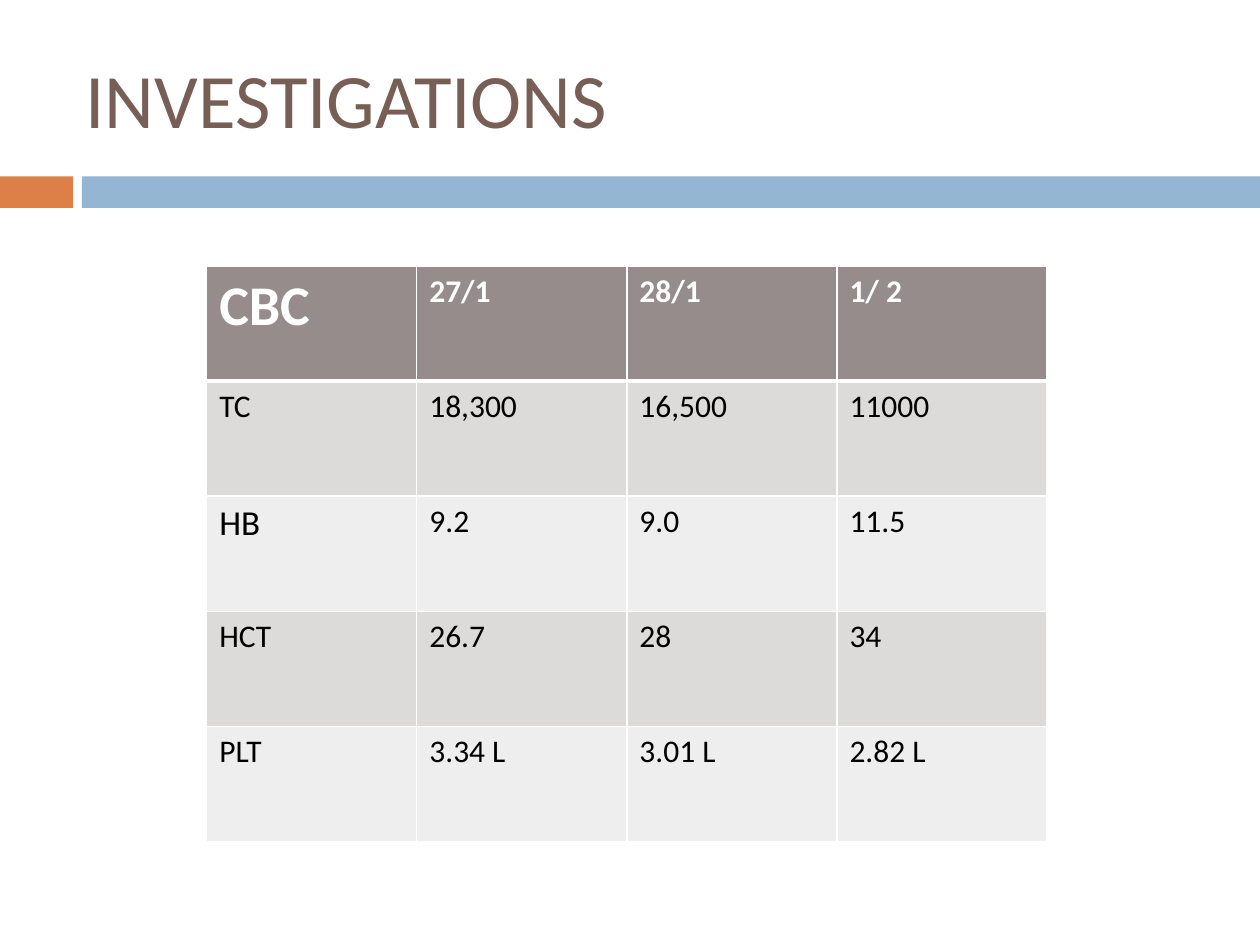
from dataclasses import dataclass

from lxml import etree
from pptx import Presentation
from pptx.dml.color import RGBColor
from pptx.enum.shapes import MSO_SHAPE
from pptx.enum.text import MSO_ANCHOR, MSO_AUTO_SIZE, PP_ALIGN
from pptx.oxml.ns import qn
from pptx.util import Inches, Pt

RECTANGLE = MSO_SHAPE.RECTANGLE
MIDDLE = MSO_ANCHOR.MIDDLE
LEFT = PP_ALIGN.LEFT
NO_FIT = MSO_AUTO_SIZE.NONE
TITLE_ONLY = 5


@dataclass(frozen=True)
class Theme:
    font: str = "Calibri"
    title_color: str = "775F55"
    accent: str = "DD8047"
    band: str = "94B6D2"
    header_fill: str = "968C8C"
    row_fills: tuple = ("DDDADA", "EFEEEE")
    header_text: str = "FFFFFF"
    body_text: str = "000000"
    border: str = "FFFFFF"
    title_size: int = 44
    corner_size: int = 32
    emphasis_size: int = 20
    body_size: int = 18
    thin_border: int = 1
    header_border: int = 3


BLOOD_COUNTS = [
    ["CBC", "27/1", "28/1", "1/ 2"],
    ["TC", "18,300", "16,500", "11000"],
    ["HB", "9.2", "9.0", "11.5"],
    ["HCT", "26.7", "28", "34"],
    ["PLT", "3.34 L", "3.01 L", "2.82 L"],
]


class SlideBuilder:
    """Holds the theme and the slide being filled."""

    def __init__(self, page, theme):
        self.page = page
        self.theme = theme

    def format_text(self, text_frame, size, color, bold=False):
        for para in text_frame.paragraphs:
            para.alignment = LEFT
            for span in para.runs:
                span.font.name = self.theme.font
                span.font.size = Pt(size)
                span.font.bold = bold
                span.font.color.rgb = RGBColor.from_string(color)

    def title(self, text, left, top, width, height):
        box = self.page.shapes.title
        box.left, box.top = Inches(left), Inches(top)
        box.width, box.height = Inches(width), Inches(height)
        frame = box.text_frame
        frame.text = text
        frame.vertical_anchor = MIDDLE
        frame.auto_size = NO_FIT
        self.format_text(frame, self.theme.title_size, self.theme.title_color)

    def bar(self, left, top, width, height, color):
        box = self.page.shapes.add_shape(
            RECTANGLE, Inches(left), Inches(top), Inches(width), Inches(height))
        box.shadow.inherit = False
        box.fill.solid()
        box.fill.fore_color.rgb = RGBColor.from_string(color)
        box.line.fill.background()

    def cell_borders(self, cell, top, bottom):
        """Draw all four borders; they must precede the fill in the cell's XML."""
        properties = cell._tc.get_or_add_tcPr()
        thin = self.theme.thin_border
        sides = {"lnL": thin, "lnR": thin, "lnT": top, "lnB": bottom}
        for position, (side, width) in enumerate(sides.items()):
            line = etree.Element(qn(f"a:{side}"), w=str(Pt(width)))
            fill = etree.SubElement(line, qn("a:solidFill"))
            etree.SubElement(fill, qn("a:srgbClr"), val=self.theme.border)
            properties.insert(position, line)

    def table(self, rows, left, top, width, height, sizes):
        """Fill a table; sizes maps (row, column) to any special type size."""
        theme = self.theme
        grid = self.page.shapes.add_table(
            len(rows), len(rows[0]),
            Inches(left), Inches(top), Inches(width), Inches(height)).table
        for row, values in enumerate(rows):
            header = row == 0
            fill = theme.header_fill if header else theme.row_fills[(row - 1) % 2]
            color = theme.header_text if header else theme.body_text
            above = theme.header_border if row == 1 else theme.thin_border
            below = theme.header_border if header else theme.thin_border
            for column, value in enumerate(values):
                cell = grid.cell(row, column)
                cell.text_frame.text = value
                cell.fill.solid()
                cell.fill.fore_color.rgb = RGBColor.from_string(fill)
                size = sizes.get((row, column), theme.body_size)
                self.format_text(cell.text_frame, size, color, bold=header)
                self.cell_borders(cell, above, below)


def main():
    theme = Theme()
    deck = Presentation()
    deck.slide_width, deck.slide_height = Inches(10), Inches(7.5)
    page = deck.slides.add_slide(deck.slide_layouts[TITLE_ONLY])
    builder = SlideBuilder(page, theme)

    builder.bar(0, 1.4, 0.58, 0.25, theme.accent)
    builder.bar(0.65, 1.4, 9.35, 0.25, theme.band)
    builder.title("INVESTIGATIONS", 0.58, 0.3, 8.92, 0.95)
    builder.table(BLOOD_COUNTS, 1.64, 2.11, 6.67, 4.57,
                  sizes={(0, 0): theme.corner_size, (2, 0): theme.emphasis_size})
    deck.save("out.pptx")


if __name__ == "__main__":
    main()
